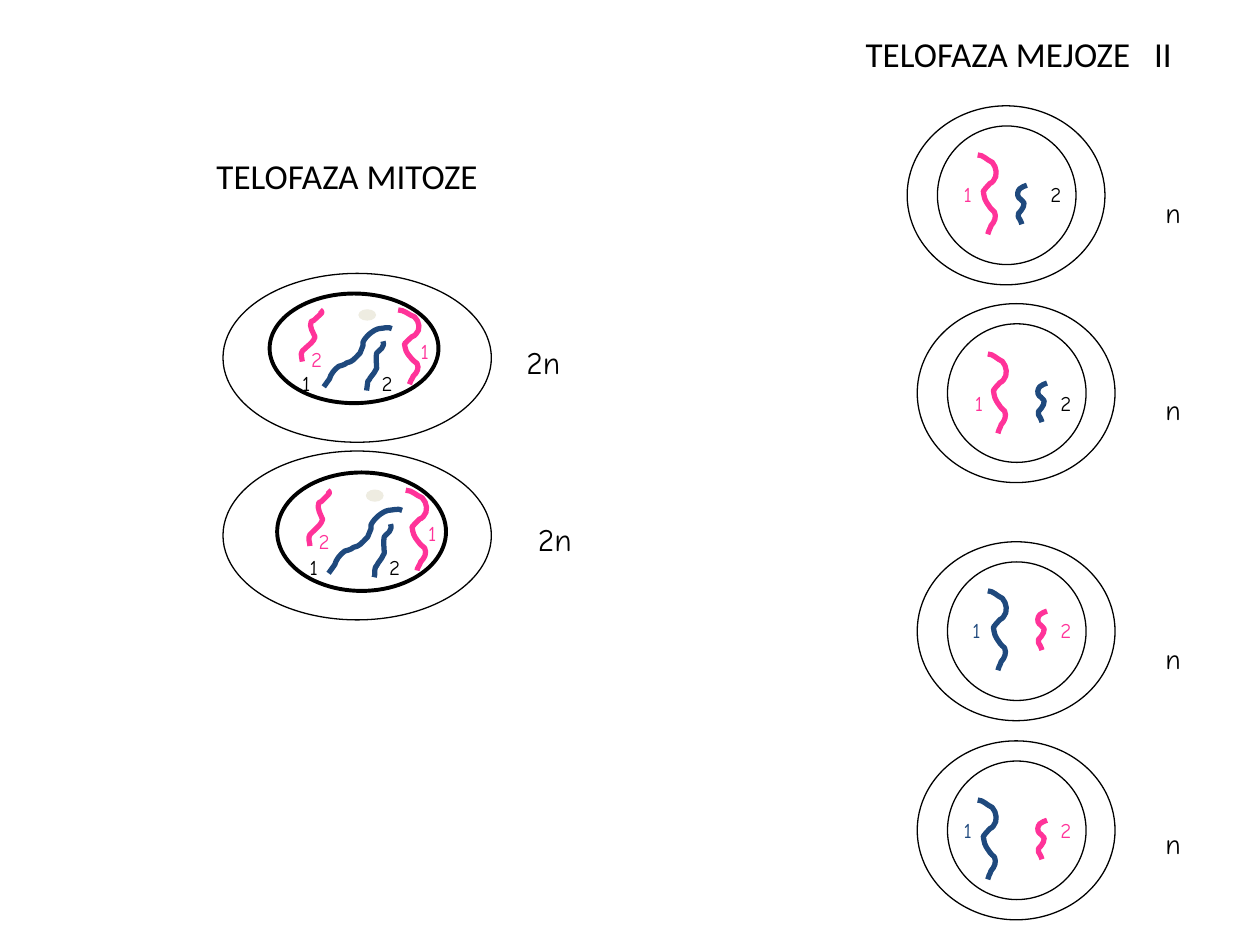
from lxml import etree
from pptx import Presentation
from pptx.dml.color import RGBColor
from pptx.enum.shapes import MSO_SHAPE
from pptx.enum.text import MSO_AUTO_SIZE, PP_ALIGN
from pptx.oxml.ns import qn
from pptx.util import Inches, Pt

OVAL = MSO_SHAPE.OVAL
GROW = MSO_AUTO_SIZE.SHAPE_TO_FIT_TEXT
LEFT, CENTER = PP_ALIGN.LEFT, PP_ALIGN.CENTER

BLACK, PINK, BLUE, BEIGE = "000000", "FF3399", "1F497D", "EEECE1"
HEADING_FONT, LABEL_FONT = "Calibri", "Comic Neue"

# Chromosome outlines: width, height, then a start point and cubic Bezier triples
WAVY = (18, 64, [
    (0, 0), (5, 0), (8, 4), (13, 6), (17, 10), (18, 17), (14, 21),
    (13, 22), (12, 23), (11, 23), (10, 24), (8, 26), (7, 27),
    (7, 28), (5, 29), (5, 29), (6, 35), (6, 36), (10, 41),
    (11, 43), (15, 46), (15, 46), (17, 50), (15, 54), (12, 57),
    (11, 60), (9, 62), (9, 64)])
HOOKED = (19, 44, [
    (16, 0), (19, 2), (17, 3), (14, 6), (13, 7), (12, 8), (11, 9),
    (10, 9), (9, 10), (9, 10), (7, 14), (11, 20), (12, 23),
    (11, 27), (8, 29), (5, 32), (4, 33), (2, 35), (2, 35),
    (0, 38), (2, 41), (2, 44)])
DIAGONAL = (59, 53, [
    (59, 2), (56, 0), (51, 2), (48, 2), (43, 3), (36, 9), (34, 14),
    (34, 15), (34, 16), (34, 17), (33, 19), (33, 20), (32, 22),
    (32, 23), (31, 24), (31, 24), (26, 29), (25, 31), (20, 32),
    (18, 34), (13, 35), (13, 35), (9, 38), (6, 42), (5, 46),
    (3, 48), (2, 51), (0, 53)])
LEANING = (14, 43, [
    (13, 1), (14, 4), (13, 5), (12, 7), (11, 8), (10, 9), (9, 10),
    (9, 10), (8, 11), (8, 11), (7, 15), (8, 20), (8, 24),
    (7, 27), (5, 29), (3, 32), (3, 33), (1, 35), (1, 35),
    (0, 38), (1, 40), (0, 43)])


def color(hex_value):
    return RGBColor.from_string(hex_value)


def add_oval(slide, left, top, width, height, line=BLACK, weight=0.75, fill=None):
    oval = slide.shapes.add_shape(
        OVAL, Inches(left), Inches(top), Inches(width), Inches(height))
    oval.shadow.inherit = False
    if fill:
        oval.fill.solid()
        oval.fill.fore_color.rgb = color(fill)
    else:
        oval.fill.background()
    oval.line.color.rgb = color(line)
    oval.line.width = Pt(weight)


def add_text(slide, words, left, top, width, height, size,
             ink=BLACK, font=LABEL_FONT, align=CENTER, wrap=False):
    box = slide.shapes.add_textbox(
        Inches(left), Inches(top), Inches(width), Inches(height))
    frame = box.text_frame
    frame.word_wrap = wrap
    frame.auto_size = GROW
    paragraph = frame.paragraphs[0]
    paragraph.alignment = align
    runs = []
    for word in words:
        run = paragraph.add_run()
        run.text = word
        run.font.size = Pt(size)
        run.font.name = font
        run.font.color.rgb = color(ink)
        runs.append(run)
    return runs


def bend_segments(strand):
    """Turn each three line segments of an outline into one cubic Bezier curve."""
    segments = list(strand._element.iter(qn("a:lnTo")))
    for i in range(0, len(segments), 3):
        curve = etree.Element(qn("a:cubicBezTo"))
        segments[i].addprevious(curve)
        for segment in segments[i:i + 3]:
            curve.append(segment[0])
            segment.getparent().remove(segment)


def add_chromosome(slide, outline, left, top, width, height, ink, mirrored=False):
    full_width, full_height, points = outline
    placed = []
    for x, y in points:
        across = 1 - x / full_width if mirrored else x / full_width
        placed.append((Inches(left + across * width),
                       Inches(top + y / full_height * height)))
    builder = slide.shapes.build_freeform(*placed[0])
    builder.add_line_segments(placed[1:], close=False)
    strand = builder.convert_to_shape()
    bend_segments(strand)
    strand.shadow.inherit = False
    strand.fill.background()
    strand.line.color.rgb = color(ink)
    strand.line.width = Pt(3)


def mitosis_cell(slide, cell_top, nucleus, ploidy_left):
    left, top, width, height = nucleus
    stretch = height / 0.87
    add_oval(slide, *nucleus, weight=2.25)

    # Chromosomes, with the diagonal one growing about its centre
    diagonal_width = 0.54 * stretch
    for outline, dx, dy, w, h, ink in (
            (HOOKED, 0.24, 0.13, 0.19, 0.41, PINK),
            (WAVY, 1.02, 0.13, 0.18, 0.59, PINK),
            (DIAGONAL, 0.7 - diagonal_width / 2, 0.26, diagonal_width, 0.48, BLUE),
            (LEANING, 0.77, 0.37, 0.14, 0.4, BLUE)):
        add_chromosome(slide, outline, left + dx, top + dy * stretch,
                       w, h * stretch, ink)

    # Chromosome numbers
    for number, dx, dy, w, ink in (
            ("1", 0.16, 0.56, 0.25, BLACK), ("2", 0.79, 0.56, 0.26, BLACK),
            ("2", 0.23, 0.37, 0.32, PINK), ("1", 1.1, 0.31, 0.25, PINK)):
        add_text(slide, [number], left + dx, top + dy * stretch, w, 0.3, 12,
                 ink, align=LEFT, wrap=True)

    # Nucleolus, cell membrane and ploidy
    add_oval(slide, left + 0.71, top + 0.13 * stretch, 0.13, 0.08 * stretch,
             line=BEIGE, fill=BEIGE)
    add_oval(slide, 1.77, cell_top, 2.13, 1.34)
    add_text(slide, ["2n"], ploidy_left, cell_top + 0.5, 0.49, 0.4, 18, align=LEFT)


def meiosis_cell(slide, left, top, inks, long_at, short_at, number_at, ploidy_top):
    long_ink, short_ink, second_ink = inks

    # Cell membrane and nucleus
    add_oval(slide, left, top, 1.57, 1.42)
    add_oval(slide, left + 0.24, top + 0.16, 1.1, 1.1)

    # Chromosomes with their numbers
    number_left, number_top = number_at
    add_text(slide, ["1"], left + number_left, top + number_top, 0.28, 0.3, 12, long_ink)
    add_text(slide, ["2"], left + 1.03, top + number_top, 0.3, 0.3, 12, second_ink)
    add_chromosome(slide, WAVY, left + long_at[0], top + long_at[1],
                   0.16, 0.63, long_ink)
    add_chromosome(slide, WAVY, left + short_at[0], top + short_at[1],
                   0.08, 0.31, short_ink, mirrored=True)
    add_text(slide, ["n"], 9.15, ploidy_top, 0.32, 0.37, 16)


def main():
    deck = Presentation()
    deck.slide_width, deck.slide_height = Inches(10), Inches(7.5)
    slide = deck.slides.add_slide(deck.slide_layouts[6])

    # Mitosis
    mitosis_cell(slide, 2.17, (2.14, 2.33, 1.34, 0.87), 4.08)
    mitosis_cell(slide, 3.58, (2.2, 3.75, 1.34, 0.94), 4.17)
    add_text(slide, ["TELOFAZA MITOZE"], 1.18, 1.18, 3.15, 0.44, 20,
             font=HEADING_FONT, wrap=True)

    # Meiosis II, with a widened space before the numeral
    heading = add_text(slide, ["TELOFAZA MEJOZE", " ", "II"], 6.76, 0.21, 2.65, 0.44,
                       20, font=HEADING_FONT)
    heading[1]._r.get_or_add_rPr().set("spc", "900")
    pink_long, blue_long = (PINK, BLUE, BLACK), (BLUE, PINK, PINK)
    for cell in (
            (7.2, 0.84, pink_long, (0.56, 0.39), (0.87, 0.63), (0.34, 0.55), 1.5),
            (7.28, 2.41, pink_long, (0.56, 0.4), (0.95, 0.63), (0.35, 0.64), 3.07),
            (7.28, 4.3, blue_long, (0.56, 0.39), (0.95, 0.55), (0.33, 0.55), 5.04),
            (7.28, 5.88, blue_long, (0.48, 0.47), (0.95, 0.63), (0.26, 0.56), 6.51)):
        meiosis_cell(slide, *cell)

    deck.save("out.pptx")


if __name__ == "__main__":
    main()
